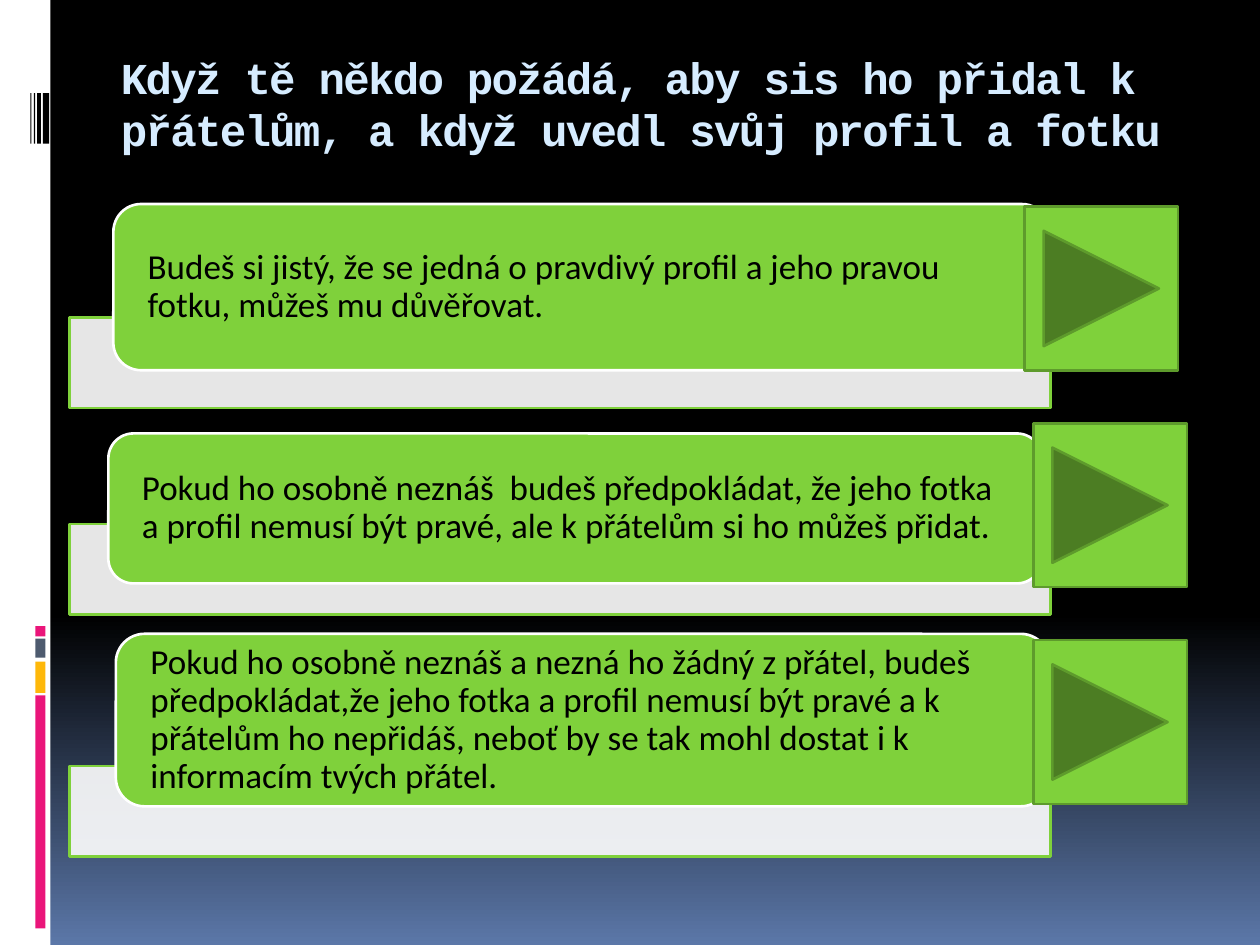
from dataclasses import dataclass
from lxml.etree import SubElement
from pptx import Presentation
from pptx.dml.color import RGBColor
from pptx.enum.shapes import MSO_SHAPE
from pptx.enum.text import MSO_ANCHOR, MSO_AUTO_SIZE, PP_ALIGN
from pptx.oxml.ns import qn
from pptx.util import Pt


@dataclass(frozen=True)
class Theme:
    black: str = "000000"
    white: str = "FFFFFF"
    blue: str = "5B77A8"
    pale: str = "D6ECFF"
    green: str = "7FD13B"
    dark: str = "5E9B2C"
    pink: str = "EA157A"
    gold: str = "FEB80A"
    slate: str = "4E5B6F"
    head: float = 25.2
    body: float = 20
    line: float = 1.5
    mono: str = "Courier New"
    sans: str = "Calibri"


THEME = Theme()

TITLE = "Když tě někdo požádá, aby sis ho přidal k přátelům, a když uvedl svůj profil a fotku"

# Each answer: bar top, card box, button corner, wording
ROWS = [
    (181.4, (64.8, 116.6, 535, 95), (585.4, 118.1),
     "Budeš si jistý, že se jedná o pravdivý profil a jeho pravou fotku, "
     "můžeš mu důvěřovat."),
    (299.5, (61.9, 247.7, 533.5, 85.7), (590.4, 241.9),
     "Pokud ho osobně neznáš  budeš předpokládat, že jeho fotka a profil "
     "nemusí být pravé, ale k přátelům si ho můžeš přidat."),
    (437.8, (66.2, 362.2, 533.5, 98.6), (590.4, 365.8),
     "Pokud ho osobně neznáš a nezná ho žádný z přátel, budeš "
     "předpokládat,že jeho fotka a profil nemusí být pravé a k přátelům "
     "ho nepřidáš, neboť by se tak mohl dostat i k informacím tvých přátel."),
]


def tint(code):
    return RGBColor.from_string(code)


def add_box(slide, kind, box, fill, line=None):
    shape = slide.shapes.add_shape(kind, *map(Pt, box))
    shape.shadow.inherit = False
    shape.fill.solid()
    shape.fill.fore_color.rgb = tint(fill)
    if line:
        shape.line.color.rgb = tint(line)
        shape.line.width = Pt(THEME.line)
    else:
        shape.line.fill.background()
    return shape


def fade(shape, share):
    color = shape.fill._xPr.find(qn("a:solidFill"))[0]
    SubElement(color, qn("a:alpha")).set("val", str(share * 1000))


def add_run(para, text, face, size, color, bold=False):
    run = para.add_run()
    run.text = text
    font = run.font
    font.name, font.size, font.bold = face, Pt(size), bold
    font.color.rgb = tint(color)
    return run


def set_frame(frame, sides, top, anchor):
    frame.word_wrap = True
    frame.auto_size = MSO_AUTO_SIZE.NONE
    frame.vertical_anchor = anchor
    frame.margin_left = frame.margin_right = Pt(sides)
    frame.margin_top, frame.margin_bottom = Pt(top), Pt(0)
    para = frame.paragraphs[0]
    para.alignment = PP_ALIGN.LEFT
    return para


def paint_back(slide):
    fill = slide.background.fill
    fill.gradient()
    fill.gradient_angle = 270
    stops = [(0.65, THEME.black), (1, THEME.blue)]
    for stop, (place, color) in zip(fill.gradient_stops, stops):
        stop.position = place
        stop.color.rgb = tint(color)


def add_strip(slide):
    rect = MSO_SHAPE.RECTANGLE
    add_box(slide, rect, (0, 0, 28.8, 540), THEME.white)
    # Coloured blocks
    for top, height, color in [(397.4, 133.2, THEME.pink), (378, 18, THEME.gold),
                               (365, 10.8, THEME.slate), (357.8, 5.8, THEME.pink)]:
        add_box(slide, rect, (20.2, top, 5.8, height), color)
    # Thin black bars
    for left, width in [(24.5, 3.6), (21.2, 2.2), (19.4, 0.7), (17.3, 0.7)]:
        add_box(slide, rect, (left, 53.3, width, 28.8), THEME.black)


def set_title(slide):
    title = slide.shapes.title
    title.left, title.top = Pt(61.9), Pt(22.3)
    title.width, title.height = Pt(612), Pt(72)
    para = set_frame(title.text_frame, 7.2, 6.5, MSO_ANCHOR.TOP)
    para.line_spacing = Pt(30)
    run = add_run(para, TITLE, THEME.mono, THEME.head, THEME.pale, True)
    run.font._element.set("spc", "-100")


def add_row(slide, top, box, spot, text):
    bar = add_box(slide, MSO_SHAPE.RECTANGLE, (39.6, top, 560.9, 51.8),
                  THEME.white, THEME.green)
    fade(bar, 90)
    card = add_box(slide, MSO_SHAPE.ROUNDED_RECTANGLE, box, THEME.green, THEME.white)
    para = set_frame(card.text_frame, 15, 0, MSO_ANCHOR.MIDDLE)
    para.line_spacing = 0.9
    add_run(para, text, THEME.sans, THEME.body, THEME.black)


def add_button(slide, spot):
    add_box(slide, MSO_SHAPE.ACTION_BUTTON_FORWARD_OR_NEXT, (*spot, 87.8, 93.6),
            THEME.green, THEME.dark)


def main():
    deck = Presentation()
    deck.slide_width, deck.slide_height = Pt(720), Pt(540)
    slide = deck.slides.add_slide(deck.slide_layouts[5])
    paint_back(slide)
    add_strip(slide)
    set_title(slide)
    # Answers, then their buttons on top
    for row in ROWS:
        add_row(slide, *row)
    for _, _, spot, _ in ROWS:
        add_button(slide, spot)
    deck.save("out.pptx")


if __name__ == "__main__":
    main()
